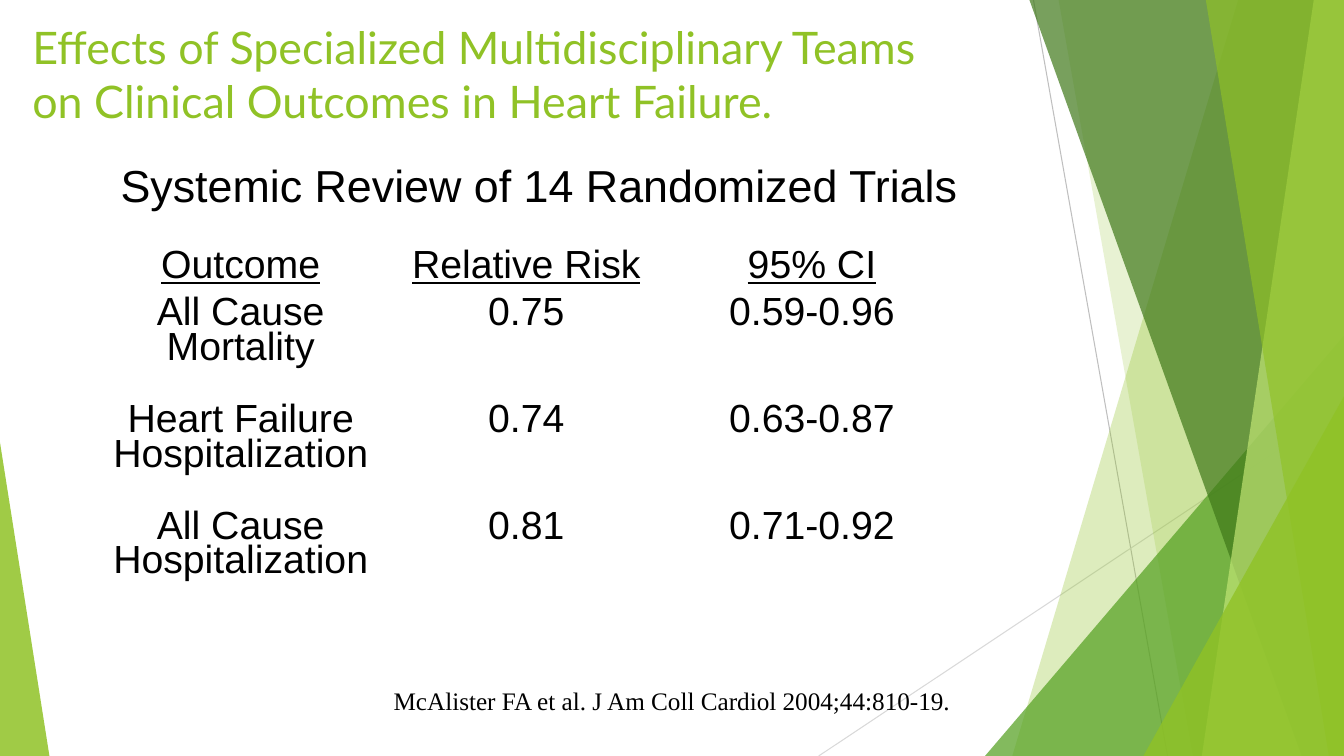
import pptx
import pptx.util
import pptx.dml.color
import pptx.enum.shapes
import pptx.enum.text
import pptx.oxml.ns
import pptx.oxml.xmlchemy

WIDE, HIGH = 13.33, 7.5  # grid columns and rows, one inch each
HUES = {
    "lime": "90C226", "leaf": "54A021", "pine": "3F7819", "pale": "C0E474",
    "ash": "BFBFBF", "mist": "D9D9D9", "ink": "000000",
}
ROWS = [
    ("Outcome", "Relative Risk", "95% CI"),
    ("All Cause Mortality", "0.75", "0.59-0.96"),
    ("Heart Failure Hospitalization", "0.74", "0.63-0.87"),
    ("All Cause Hospitalization", "0.81", "0.71-0.92"),
]
# Slabs: inset from the right at top and bottom. Peaks: width and height.
FACETS = [
    ("slab", 1.05, 3.29, "lime", 30),
    ("slab", 2.83, 1.5, "lime", 20),
    ("peak", 3.56, 4.17, "leaf", 72),
    ("slab", 3.12, 0.42, "pine", 70),
    ("slab", 0.3, 1.41, "pale", 70),
    ("slab", 1.37, 0.15, "lime", 65),
    ("peak", 1.99, 3.57, "lime", 80),
]


def grid(*cells):
    return [pptx.util.Inches(cell) for cell in cells]


def hue(name):
    return pptx.dml.color.RGBColor.from_string(HUES[name])


def tint(shape, name, alpha):
    """Fill with a colour at alpha percent, without outline or shadow."""
    shape.shadow.inherit = False
    shape.line.fill.background()
    shape.fill.solid()
    shape.fill.fore_color.rgb = hue(name)
    tone = shape._element.spPr.find(".//" + pptx.oxml.ns.qn("a:srgbClr"))
    node = pptx.oxml.xmlchemy.OxmlElement("a:alpha")
    node.set("val", str(alpha * 1000))
    tone.append(node)


def thread(slide, start, end, name):
    line = slide.shapes.add_connector(
        pptx.enum.shapes.MSO_CONNECTOR.STRAIGHT, *grid(*start, *end))
    line.line.color.rgb = hue(name)
    line.line.width = pptx.util.Pt(0.75)
    line._element.spPr.append(pptx.oxml.xmlchemy.OxmlElement("a:effectLst"))


def slab(slide, box, top, base):
    left, head, wide, high = box
    right, foot = left + wide, head + high
    ends = [(right, head), (right, foot), (right - base, foot)]
    form = slide.shapes.build_freeform(*grid(right - top, head))
    form.add_line_segments([grid(*end) for end in ends], close=True)
    return form.convert_to_shape()


def peak(slide, box, tip):
    shape = slide.shapes.add_shape(
        pptx.enum.shapes.MSO_SHAPE.ISOSCELES_TRIANGLE, *grid(*box))
    shape.adjustments[0] = tip
    return shape


def backdrop(slide, box):
    left, top, wide, high = box
    right, foot = left + wide, top + high
    thread(slide, (right - 3.08, top), (right - 1.75, foot), "ash")
    thread(slide, (right, top + 4.03), (right - 5.21, foot), "mist")
    for kind, first, last, name, alpha in FACETS:
        if kind == "slab":
            shape = slab(slide, box, first, last)
        else:
            shape = peak(slide, (right - first, foot - last, first, last), 1)
        tint(shape, name, alpha)
    tint(peak(slide, (left, foot - 3.11, 0.49, 3.11), 0), "lime", 85)


def style(para, face, size, name, align):
    para.alignment = align
    para.font.name = face
    para.font.size = pptx.util.Pt(size)
    para.font.color.rgb = hue(name)


def heading(slide, box, text):
    title = slide.shapes.title
    title.left, title.top, title.width, title.height = grid(*box)
    frame = title.text_frame
    frame.text = text
    frame.word_wrap = True
    frame.auto_size = pptx.enum.text.MSO_AUTO_SIZE.NONE
    frame.vertical_anchor = pptx.enum.text.MSO_ANCHOR.TOP
    style(frame.paragraphs[0], "Lato", 32, "lime", pptx.enum.text.PP_ALIGN.LEFT)


def label(slide, box, text, face, size):
    frame = slide.shapes.add_textbox(*grid(*box)).text_frame
    frame.text = text
    frame.word_wrap = False
    frame.auto_size = pptx.enum.text.MSO_AUTO_SIZE.SHAPE_TO_FIT_TEXT
    style(frame.paragraphs[0], face, size, "ink", pptx.enum.text.PP_ALIGN.CENTER)


def results(slide, box):
    table = slide.shapes.add_table(len(ROWS), len(ROWS[0]), *grid(*box)).table
    table.first_row = table.horz_banding = False
    for row, high in zip(table.rows, grid(0.46, 1.06, 1.06, 1.06)):
        row.height = high
    for i, texts in enumerate(ROWS):
        for j, text in enumerate(texts):
            cell = table.cell(i, j)
            cell.fill.background()
            cell.text = text
            para = cell.text_frame.paragraphs[0]
            style(para, "Arial", 28, "ink", pptx.enum.text.PP_ALIGN.CENTER)
            para.line_spacing = 0.8
            para.font.underline = i == 0


def main():
    deck = pptx.Presentation()
    deck.slide_width, deck.slide_height = grid(WIDE, HIGH)
    slide = deck.slides.add_slide(deck.slide_layouts[5])
    backdrop(slide, (0, 0, WIDE, HIGH))
    heading(slide, (0.22, 0.15, 9.4, 1.44),
            "Effects of Specialized Multidisciplinary Teams "
            "on Clinical Outcomes in Heart Failure.")
    results(slide, (0.97, 2.44, 8.5, 3.64))
    label(slide, (1.09, 1.52, 8.52, 0.63),
          "Systemic Review of 14 Randomized Trials", "Arial", 32)
    label(slide, (3.78, 6.75, 5.77, 0.4),
          "McAlister FA et al. J Am Coll Cardiol 2004;44:810-19.",
          "Times New Roman", 18)
    deck.save("out.pptx")


if __name__ == "__main__":
    main()
